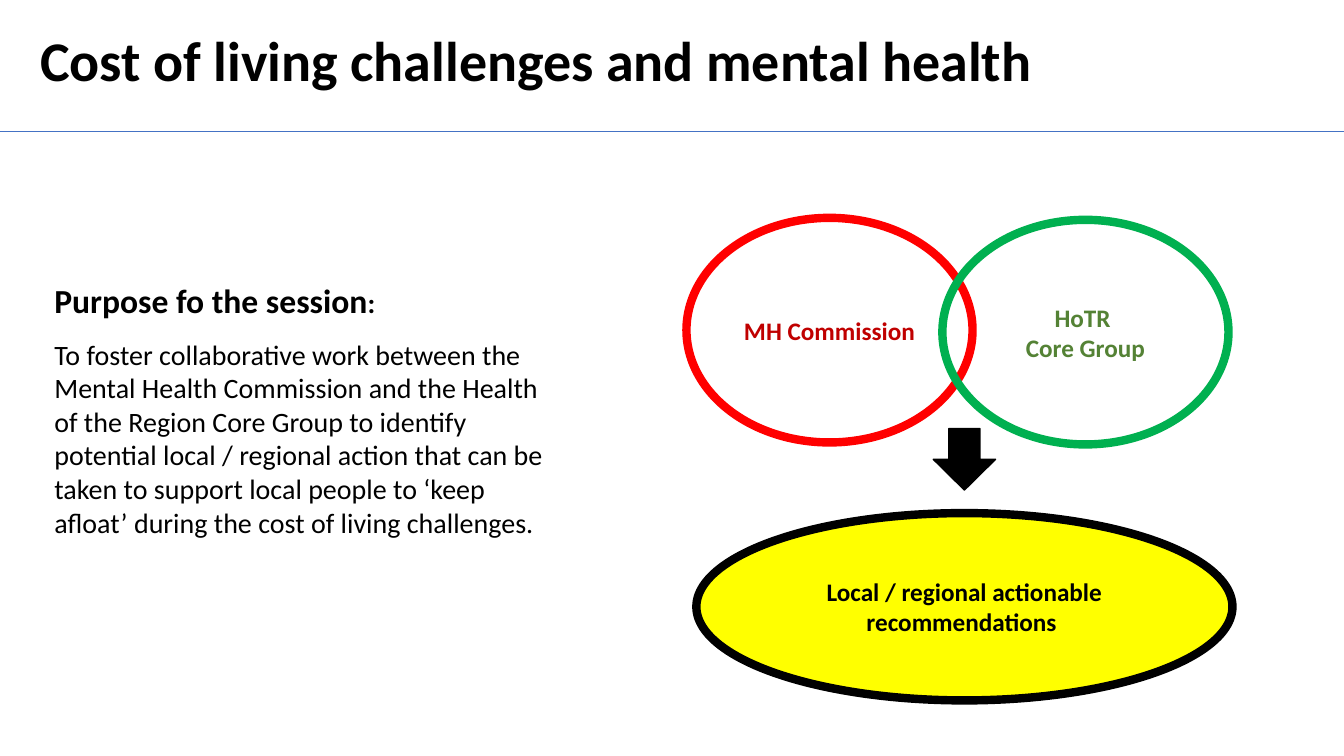
from dataclasses import dataclass

from lxml import etree
from pptx import Presentation
from pptx.dml.color import RGBColor
from pptx.enum.shapes import MSO_CONNECTOR, MSO_SHAPE
from pptx.enum.text import MSO_ANCHOR, PP_ALIGN
from pptx.oxml.ns import qn
from pptx.util import Cm, Pt

ELLIPSE, DOWN_ARROW = MSO_SHAPE.OVAL, MSO_SHAPE.DOWN_ARROW
STRAIGHT = MSO_CONNECTOR.STRAIGHT
MIDDLE, CENTER, LEFT = MSO_ANCHOR.MIDDLE, PP_ALIGN.CENTER, PP_ALIGN.LEFT


@dataclass(frozen=True)
class Theme:
    font: str = "Calibri"
    black: str = "000000"
    rule: str = "4472C4"
    red: str = "FF0000"
    dark_red: str = "C00000"
    green: str = "00B050"
    dark_green: str = "548235"
    yellow: str = "FFFF00"
    title: int = 40
    heading: int = 24
    body: int = 20
    label: int = 18
    outline: int = 6


THEME = Theme()
SLIDE_W, SLIDE_H = 33.87, 19.05


def add_run(p, text, size, color=THEME.black, bold=True):
    r = p.add_run()
    r.text = text
    fmt = {"name": THEME.font, "size": Pt(size), "bold": bold}
    for key, value in fmt.items():
        setattr(r.font, key, value)
    r.font.color.rgb = RGBColor.from_string(color)


def add_paragraphs(tf, paragraphs, align=LEFT, gap=0):
    tf.word_wrap = True
    for i, runs in enumerate(paragraphs):
        p = tf.add_paragraph() if i else tf.paragraphs[0]
        p.alignment = align
        p.space_before = Pt(gap if i else 0)
        for run in runs:
            add_run(p, *run)


def add_text(s, box, paragraphs, gap=0):
    sp = s.shapes.add_textbox(*map(Cm, box))
    add_paragraphs(sp.text_frame, paragraphs, gap=gap)


def add_rule(s, y):
    line = s.shapes.add_connector(STRAIGHT, 0, Cm(y), Cm(SLIDE_W), Cm(y))
    line.line.color.rgb = RGBColor.from_string(THEME.rule)
    line.line.width = Pt(0.5)
    etree.SubElement(line._element.spPr, qn("a:effectLst"))


def add_figure(s, kind, box, outline, width, fill=None, lines=(), color=THEME.black):
    sp = s.shapes.add_shape(kind, *map(Cm, box))
    sp.shadow.inherit = False
    if fill:
        sp.fill.solid()
        sp.fill.fore_color.rgb = RGBColor.from_string(fill)
    else:
        sp.fill.background()
    sp.line.color.rgb = RGBColor.from_string(outline)
    sp.line.width = Pt(width)
    sp.text_frame.vertical_anchor = MIDDLE
    add_paragraphs(sp.text_frame, [[(t, THEME.label, color)] for t in lines], CENTER)


def main():
    prs = Presentation()
    prs.slide_width, prs.slide_height = Cm(SLIDE_W), Cm(SLIDE_H)
    s = prs.slides.add_slide(prs.slide_layouts[6])

    add_text(s, (0.76, 0.51, 26.8, 1.96),
             [[("Cost of living challenges and mental health", THEME.title)]])
    add_rule(s, 3.3)
    purpose = (
        "To foster collaborative work between the Mental Health Commission and "
        "the Health of the Region Core Group to identify potential local / regional "
        "action that can be taken to support local people to ‘keep afloat’ during "
        "the cost of living challenges."
    )
    add_text(s, (1.12, 6.93, 12.85, 6.83), [
        [("Purpose fo the session", THEME.heading), (":", THEME.body)],
        [(purpose, THEME.body, THEME.black, False)],
    ], gap=12)

    groups = [
        (17.3, 5.49, THEME.red, THEME.dark_red, ["MH Commission"]),
        (23.75, 5.54, THEME.green, THEME.dark_green, ["HoTR ", "Core Group"]),
    ]
    for x, y, outline, color, lines in groups:
        add_figure(s, ELLIPSE, (x, y, 7.21, 5.66), outline, THEME.outline,
                   lines=lines, color=color)
    add_figure(s, DOWN_ARROW, (23.52, 10.8, 1.57, 1.55), THEME.black, 1, THEME.black)
    add_figure(s, ELLIPSE, (17.55, 12.93, 13.51, 4.72), THEME.black, THEME.outline,
               THEME.yellow, ["Local / regional actionable recommendations "])

    prs.save("out.pptx")


if __name__ == "__main__":
    main()
